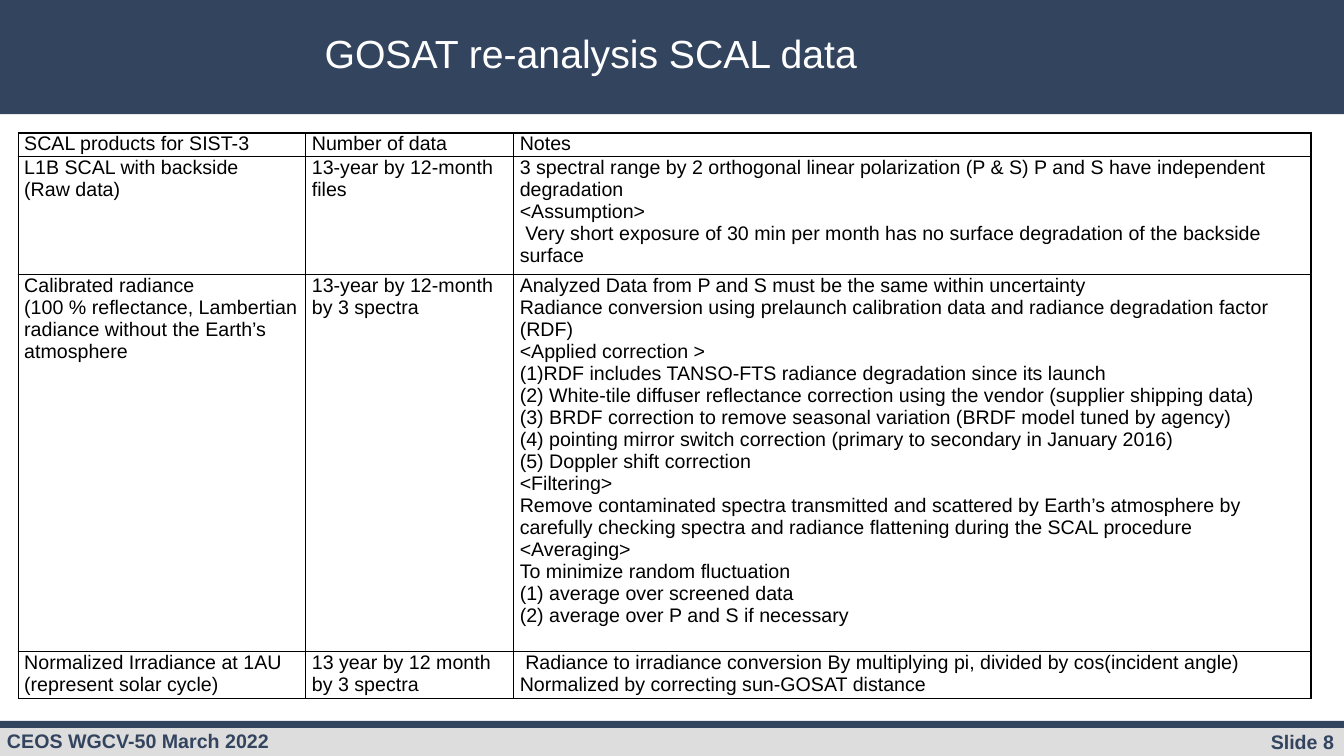
from lxml import etree
from pptx import Presentation
from pptx.dml.color import RGBColor
from pptx.enum.shapes import MSO_SHAPE
from pptx.enum.text import MSO_ANCHOR, PP_ALIGN
from pptx.oxml import parse_xml
from pptx.util import Pt

RECT = MSO_SHAPE.RECTANGLE
TOP = MSO_ANCHOR.TOP
LEFT, CENTER, RIGHT = PP_ALIGN.LEFT, PP_ALIGN.CENTER, PP_ALIGN.RIGHT
NAVY, GREY, WHITE, BLACK = "33445F", "DDDDDD", "FFFFFF", "000000"
NS = "http://schemas.openxmlformats.org/drawingml/2006/main"


def rgb(color):
    return RGBColor.from_string(color)


def style(p, size, color, align=LEFT, bold=False):
    p.alignment = align
    p.font.name = "Arial"
    p.font.size = Pt(size)
    p.font.bold = bold
    p.font.color.rgb = rgb(color)


prs = Presentation()
prs.slide_width, prs.slide_height = Pt(960), Pt(540)
s = prs.slides.add_slide(prs.slide_layouts[5])

title = s.shapes.title
title.left, title.top, title.width, title.height = Pt(123), Pt(17), Pt(598), Pt(32)
title.text = "GOSAT re-analysis SCAL data"
title.text_frame.vertical_anchor = TOP
style(title.text_frame.paragraphs[0], 28, WHITE, CENTER)

for top, height, color in [(0, 81.5, NAVY), (517.5, 22.5, GREY), (515, 5, NAVY)]:
    sp = s.shapes.add_shape(RECT, 0, Pt(top), prs.slide_width, Pt(height))
    sp.shadow.inherit = False
    sp.fill.solid()
    sp.fill.fore_color.rgb = rgb(color)
    sp.line.fill.background()
    title.element.addprevious(sp.element)

for text, left, width, top, align in [
    ("CEOS WGCV-50 March 2022", 0, 386, 517, LEFT),
    ("Slide 8", 808, 152, 518, RIGHT),
]:
    tf = s.shapes.add_textbox(Pt(left), Pt(top), Pt(width), Pt(22)).text_frame
    tf.word_wrap = True
    tf.margin_left, tf.margin_right = Pt(5), Pt(7)
    tf.text = text
    style(tf.paragraphs[0], 14, NAVY, align, True)

rows = [
    ["SCAL products for SIST-3", "Number of data", "Notes"],
    [
        "L1B SCAL with backside\n(Raw data)",
        "13-year by 12-month files",
        "3 spectral range by 2 orthogonal linear polarization (P & S) P and S have independent degradation\n"
        "<Assumption>\n"
        "Very short exposure of 30 min per month has no surface degradation of the backside surface",
    ],
    [
        "Calibrated radiance\n"
        "(100 % reflectance, Lambertian radiance without the Earth’s atmosphere",
        "13-year by 12-month by 3 spectra",
        "Analyzed Data from P and S must be the same within uncertainty\n"
        "Radiance conversion using prelaunch calibration data and radiance degradation factor (RDF)\n"
        "<Applied correction >\n"
        "(1)RDF includes TANSO-FTS radiance degradation since its launch\n"
        "(2) White-tile diffuser reflectance correction using the vendor (supplier shipping data)\n"
        "(3) BRDF correction to remove seasonal variation (BRDF model tuned by agency)\n"
        "(4) pointing mirror switch correction (primary to secondary in January 2016)\n"
        "(5) Doppler shift correction\n"
        "<Filtering>\n"
        "Remove contaminated spectra transmitted and scattered by Earth’s atmosphere by "
        "carefully checking spectra and radiance flattening during the SCAL procedure\n"
        "<Averaging>\n"
        "To minimize random fluctuation\n"
        "(1) average over screened data\n"
        "(2) average over P and S if necessary",
    ],
    [
        "Normalized Irradiance at 1AU (represent solar cycle)",
        "13 year by 12 month by 3 spectra",
        "Radiance to irradiance conversion By multiplying pi, divided by cos(incident angle)\n"
        "Normalized by correcting sun-GOSAT distance",
    ],
]
indented = ("Very short", "Radiance to")
col_widths = [205.5, 148.5, 569.5]
row_heights = [17, 83.5, 269.5, 33.5]

table = s.shapes.add_table(
    len(rows), len(col_widths), Pt(13), Pt(95), Pt(sum(col_widths)), Pt(sum(row_heights))
).table
table.first_row = table.horz_banding = False
for column, width in zip(table.columns, col_widths):
    column.width = Pt(width)
for row, height, texts in zip(table.rows, row_heights, rows):
    row.height = Pt(height)
    for cell, text in zip(row.cells, texts):
        cell.fill.background()
        cell.margin_left = cell.margin_right = Pt(4.3)
        cell.margin_top = cell.margin_bottom = 0
        cell.vertical_anchor = TOP
        cell.text = text
        for p in cell.text_frame.paragraphs:
            style(p, 14, BLACK)
            if p.text.startswith(indented):
                p._p.get_or_add_pPr().set("indent", str(Pt(4)))
        tcPr = cell._tc.get_or_add_tcPr()
        for i, side in enumerate("LRTB"):
            ln = parse_xml(f'<a:ln{side} xmlns:a="{NS}" w="{Pt(1)}"/>')
            fill = etree.SubElement(ln, f"{{{NS}}}solidFill")
            etree.SubElement(fill, f"{{{NS}}}srgbClr", val=BLACK)
            tcPr.insert(i, ln)

prs.save("out.pptx")
